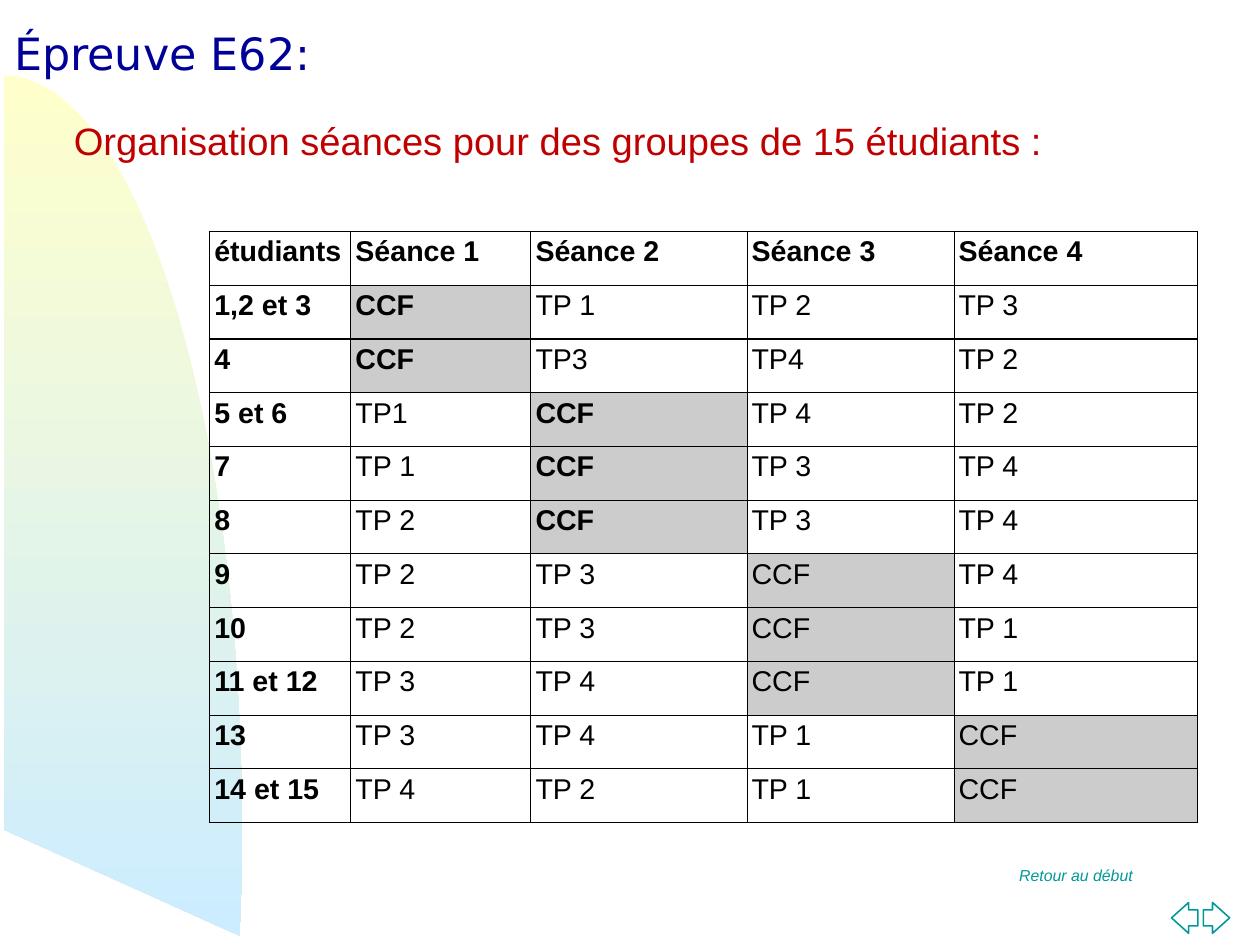
from lxml import etree
from pptx import Presentation
from pptx.dml.color import RGBColor
from pptx.enum.shapes import MSO_SHAPE
from pptx.enum.text import MSO_ANCHOR, PP_ALIGN
from pptx.oxml.ns import qn
from pptx.util import Cm, Inches, Pt

LEFT, RIGHT = MSO_SHAPE.LEFT_ARROW, MSO_SHAPE.RIGHT_ARROW
MIDDLE, TOP = MSO_ANCHOR.MIDDLE, MSO_ANCHOR.TOP
CENTER, START = PP_ALIGN.CENTER, PP_ALIGN.LEFT

WIDTH, HEIGHT = Cm(28), Cm(21)
COLORS = {
    "title": "000099", "subtitle": "C00000", "link": "009999",
    "text": "000000", "paper": "FFFFFF", "ccf": "CCCCCC",
    "fan_top": "FFFFCC", "fan_bottom": "CCECFF",
}
FONTS = {
    "title": {"name": "DejaVu Sans", "size": Pt(28), "bold": False},
    "subtitle": {"name": "Arial", "size": Pt(24)},
    "link": {"name": "Arial", "size": Pt(10), "italic": True},
    "text": {"name": "Arial", "size": Pt(18)},
}
MARGINS = ("margin_left", "margin_top", "margin_right", "margin_bottom")
COLUMNS = (11.2, 14.29, 17.15, 16.43, 19.29)
ROW_HEIGHT = 5.69
SESSIONS = (
    ("étudiants", "Séance 1", "Séance 2", "Séance 3", "Séance 4"),
    ("1,2 et 3", "CCF", "TP 1", "TP 2", "TP 3"),
    ("4", "CCF", "TP3", "TP4", "TP 2"),
    ("5 et 6", "TP1", "CCF", "TP 4", "TP 2"),
    ("7", "TP 1", "CCF", "TP 3", "TP 4"),
    ("8", "TP 2", "CCF", "TP 3", "TP 4"),
    ("9", "TP 2", "TP 3", "CCF", "TP 4"),
    ("10", "TP 2", "TP 3", "CCF", "TP 1"),
    ("11 et 12", "TP 3", "TP 4", "CCF", "TP 1"),
    ("13", "TP 3", "TP 4", "TP 1", "CCF"),
    ("14 et 15", "TP 4", "TP 2", "TP 1", "CCF"),
)
FAN_CURVES = (
    ((0.3, 7.98), (10.71, 7.98), (19.2, 43.77), (19.2, 87.79)),
    ((19.2, 87.79), (19.2, 91.54), (19.15, 95.28), (19, 99)),
)
FAN_CORNER = (0.3, 87.79)


def across(share):
    """Turn a percentage of the slide width into a length."""
    return round(WIDTH * share / 100)


def down(share):
    """Turn a percentage of the slide height into a length."""
    return round(HEIGHT * share / 100)


def area(left, top, width, height):
    """Turn percentages of the slide into a position and size."""
    return across(left), down(top), across(width), down(height)


def rgb(name):
    """Look up a named colour."""
    return RGBColor.from_string(COLORS[name])


def apply(target, values):
    """Set every attribute listed in a dict of format values."""
    for name, value in values.items():
        setattr(target, name, value)


def write(tf, text, style, paragraph=None, **font):
    """Put one formatted paragraph into a text frame."""
    p = tf.paragraphs[0]
    apply(p, paragraph or {})
    r = p.add_run()
    r.text = text
    apply(r.font, {**FONTS[style], **font})
    r.font.color.rgb = rgb(style)


def add_title(slide, text, box):
    """Place and format the title placeholder."""
    sp = slide.shapes.title
    apply(sp, dict(zip(("left", "top", "width", "height"), area(*box))))
    tf = sp.text_frame
    apply(tf, {**dict.fromkeys(MARGINS, 0), "vertical_anchor": MIDDLE, "word_wrap": True})
    write(tf, text, "title", {"alignment": CENTER, "space_before": Pt(12)})


def add_label(slide, text, style, box, anchor, space_before=0):
    """Add a left-aligned line of text."""
    tf = slide.shapes.add_textbox(*area(*box)).text_frame
    apply(tf, {"vertical_anchor": anchor, "word_wrap": True})
    write(tf, text, style, {"alignment": START, "space_before": Pt(space_before)})


def curve_points(curve, steps=40):
    """Sample a cubic Bezier curve after its starting point."""
    points = []
    for i in range(1, steps + 1):
        t = i / steps
        weights = ((1 - t) ** 3, 3 * t * (1 - t) ** 2, 3 * t ** 2 * (1 - t), t ** 3)
        points.append(tuple(sum(w * c for w, c in zip(weights, axis)) for axis in zip(*curve)))
    return points


def add_fan(slide):
    """Draw the gradient fan behind everything else."""
    x, y = FAN_CURVES[0][0]
    points = [point for curve in FAN_CURVES for point in curve_points(curve)] + [FAN_CORNER]
    builder = slide.shapes.build_freeform(across(x), down(y))
    builder.add_line_segments([(across(px), down(py)) for px, py in points], close=True)
    sp = builder.convert_to_shape()
    sp.shadow.inherit = False
    sp.line.fill.background()
    sp.fill.gradient()
    sp.fill.gradient_angle = 270
    for stop, name in zip(sp.fill.gradient_stops, ("fan_top", "fan_bottom")):
        stop.color.rgb = rgb(name)
    slide.shapes.title._element.addprevious(sp._element)


def add_arrow(slide, kind, left):
    """Add an outlined navigation arrow."""
    sp = slide.shapes.add_shape(kind, *area(left, 95.5, 2.09, 3.26))
    sp.shadow.inherit = False
    sp.adjustments[0], sp.adjustments[1] = 0.52, 0.65
    sp.fill.solid()
    sp.fill.fore_color.rgb = rgb("paper")
    sp.line.color.rgb = rgb("link")
    sp.line.width = Pt(1)


def add_borders(cell):
    """Draw thin lines on the four sides of a cell."""
    tc_pr = cell._tc.get_or_add_tcPr()
    for i, side in enumerate(("a:lnL", "a:lnR", "a:lnT", "a:lnB")):
        line = etree.Element(qn(side), w=str(Pt(0.75)))
        fill = etree.SubElement(line, qn("a:solidFill"))
        etree.SubElement(fill, qn("a:srgbClr"), val=COLORS["text"])
        tc_pr.insert(i, line)


def fill_cell(cell, text, bold):
    """Write a table cell, shading the assessment sessions."""
    apply(cell, dict.fromkeys(MARGINS, Inches(0.04)))
    write(cell.text_frame, text, "text", bold=bold)
    if text == "CCF":
        cell.fill.solid()
        cell.fill.fore_color.rgb = rgb("ccf")
    else:
        cell.fill.background()
    add_borders(cell)


def add_sessions(slide, left, top):
    """Add the table of sessions per student group."""
    rows = len(SESSIONS)
    box = area(left, top, sum(COLUMNS), ROW_HEIGHT * rows)
    table = slide.shapes.add_table(rows, len(COLUMNS), *box).table
    apply(table, {"first_row": False, "horz_banding": False})
    for column, share in zip(table.columns, COLUMNS):
        column.width = across(share)
    for i, texts in enumerate(SESSIONS):
        table.rows[i].height = down(ROW_HEIGHT)
        for j, text in enumerate(texts):
            bold = i == 0 or j == 0 or (text == "CCF" and j <= 2)
            fill_cell(table.cell(i, j), text, bold)


def main():
    """Build and save the slide."""
    prs = Presentation()
    prs.slide_width, prs.slide_height = WIDTH, HEIGHT
    slide = prs.slides.add_slide(prs.slide_layouts.get_by_name("Title Only"))
    add_title(slide, "Épreuve E62:", (-0.7, 0.73, 27.13, 9.79))
    add_fan(slide)
    add_label(slide, "Retour au début", "link", (80, 91.05, 16.79, 8.83), TOP, 2.5)
    for kind, left in ((LEFT, 92.98), (RIGHT, 95.5)):
        add_arrow(slide, kind, left)
    add_sessions(slide, 16.65, 24.5)
    add_label(slide, "Organisation séances pour des groupes de 15 étudiants :", "subtitle",
              (4.97, 11.85, 90.02, 6.05), MIDDLE)
    prs.save("out.pptx")


if __name__ == "__main__":
    main()
